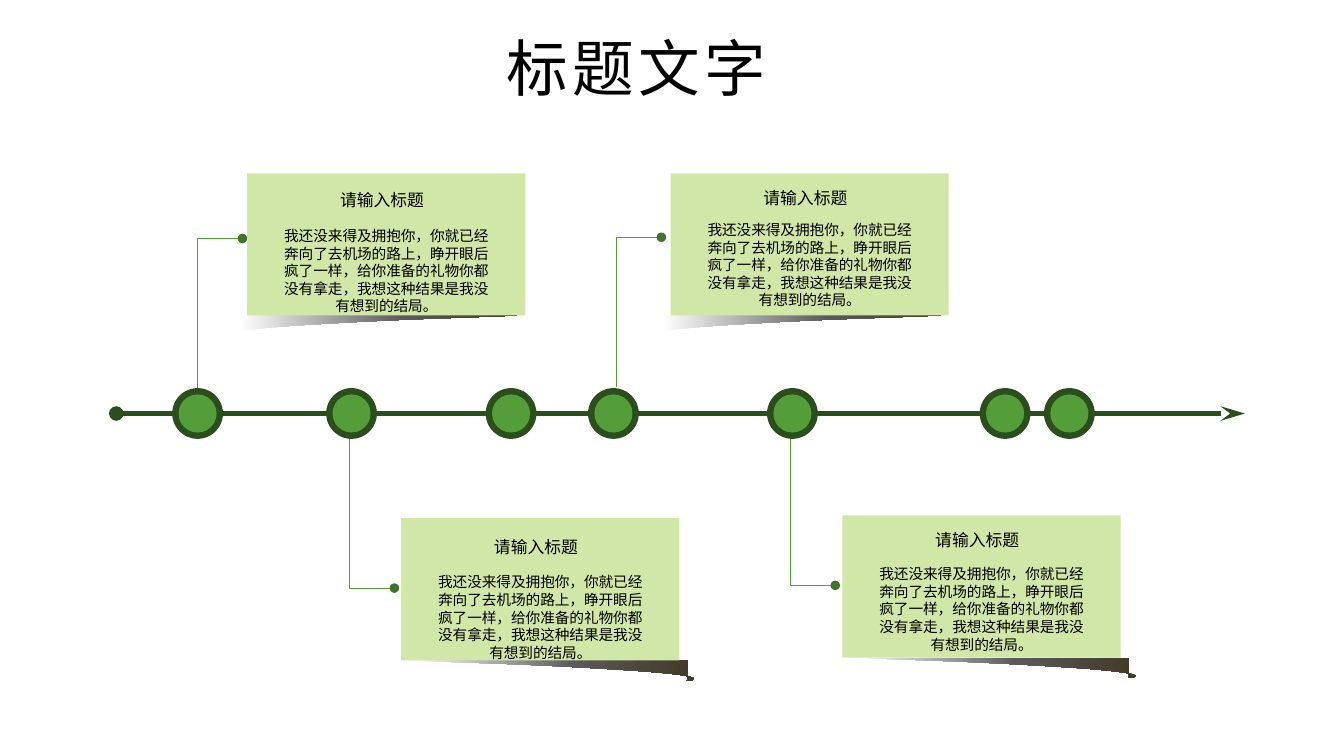
from dataclasses import dataclass

from lxml.etree import SubElement
from pptx import Presentation
from pptx.dml.color import RGBColor
from pptx.enum.shapes import MSO_CONNECTOR, MSO_SHAPE
from pptx.enum.text import MSO_ANCHOR, MSO_AUTO_SIZE, PP_ALIGN
from pptx.oxml.ns import qn
from pptx.shapes.connector import Connector
from pptx.shapes.shapetree import GroupShapes
from pptx.text.text import TextFrame
from pptx.util import Cm, Pt

DARK_GREEN, GREEN, DOT_GREEN = "2A4F1C", "549E39", "3F762A"
CARD_GREEN, BLACK = "D1E7A7", "000000"
CURL_STOPS = [(0, "FFFFFF"), (59, "5B595B"), (100, "433C29")]

HEADING = "请输入标题"
BODY = ("我还没来得及拥抱你，你就已经奔向了去机场的路上，睁开眼后疯了一样，"
        "给你准备的礼物你都没有拿走，我想这种结果是我没有想到的结局。")

# Lengths in centimetres
CARD_WIDTH, CARD_HEIGHT = 7.01, 3.58
STEM_LENGTH, BRANCH_LENGTH, DOT_SIZE = 3.78, 1.13, 0.24
AXIS_Y, AXIS_START, AXIS_END = 10.42, 2.93, 31.37
NODE_SIZE, NODE_CORE_SIZE = 1.28, 0.96
NODE_CENTRES = [4.98, 8.86, 12.88, 15.46, 19.97, 25.33, 26.95]

Point = tuple[float, float]
# Paper curl measured from the lower card corner: corners, and the controls of its two curves
CURL_CORNERS: list[Point] = [(-0.21, 0.51), (1.30, 0.25), (6.81, 0), (-0.21, 0)]
CURL_CONTROLS: list[list[Point]] = [
    [(0.05, 0.56), (-1.42, 0.43)],
    [(4.01, 0.08), (4.98, 0.08)],
]


@dataclass
class Card:
    left: float
    top: float
    heading_offset: float
    body_offset: float
    stem_x: float
    branch_y: float
    above: bool


CARDS = [
    Card(6.23, 4.37, 0.28, 1.22, 4.98, 6.01, True),
    Card(10.11, 13.06, 0.33, 1.26, 8.81, 14.82, False),
    Card(16.9, 4.37, 0.23, 1.07, 15.54, 5.98, True),
    Card(21.23, 12.99, 0.23, 1.12, 19.92, 14.75, False),
]


def colour(value: str) -> RGBColor:
    return RGBColor.from_string(value)


def add_filled(shapes: GroupShapes, kind: MSO_SHAPE, left: float, top: float,
               width: float, height: float, fill: str) -> None:
    shape = shapes.add_shape(kind, Cm(left), Cm(top), Cm(width), Cm(height))
    shape.shadow.inherit = False
    shape.fill.solid()
    shape.fill.fore_color.rgb = colour(fill)
    shape.line.fill.background()


def add_circle(shapes: GroupShapes, x: float, y: float, size: float, fill: str) -> None:
    add_filled(shapes, MSO_SHAPE.OVAL, x - size / 2, y - size / 2, size, size, fill)


def write_text(frame: TextFrame, text: str, size: float, font_name: str,
               alignment: PP_ALIGN, wrap: bool = True) -> None:
    frame.word_wrap = wrap
    frame.auto_size = MSO_AUTO_SIZE.NONE
    frame.vertical_anchor = MSO_ANCHOR.TOP
    paragraph = frame.paragraphs[0]
    paragraph.text = text
    paragraph.alignment = alignment
    paragraph.font.size = Pt(size)
    paragraph.font.name = font_name
    paragraph.font.color.rgb = colour(BLACK)


def style_connector(connector: Connector, line_colour: str, width: float) -> None:
    connector.line.color.rgb = colour(line_colour)
    connector.line.width = Pt(width)
    SubElement(connector.element.spPr, qn("a:effectLst"))


def add_curl(shapes: GroupShapes, card: Card) -> None:
    corner_x = card.left if card.above else card.left + CARD_WIDTH
    direction = 1 if card.above else -1
    bottom = card.top + CARD_HEIGHT

    def place(point: Point) -> tuple[int, int]:
        return Cm(corner_x + direction * point[0]), Cm(bottom + point[1])

    corners = [place(point) for point in CURL_CORNERS]
    builder = shapes.build_freeform(*corners[0])
    builder.add_line_segments(corners[1:], close=True)
    curl = builder.convert_to_shape()

    # Bend the first two sides
    sides = list(curl.element.spPr.iter(qn("a:lnTo")))
    for side, controls in zip(sides, CURL_CONTROLS):
        curve = side.makeelement(qn("a:cubicBezTo"))
        for x, y in map(place, controls):
            SubElement(curve, qn("a:pt"), x=str(x - curl.left), y=str(y - curl.top))
        side.addprevious(curve)
        curve.append(side[0])
        side.getparent().remove(side)

    curl.shadow.inherit = False
    curl.line.fill.background()
    curl.fill.gradient()
    curl.fill.gradient_angle = 0
    stop_list = curl.element.spPr.find(".//" + qn("a:gsLst"))
    for stop in list(stop_list):
        stop_list.remove(stop)
    for position, value in CURL_STOPS:
        stop = SubElement(stop_list, qn("a:gs"), pos=str(position * 1000))
        SubElement(stop, qn("a:srgbClr"), val=value)


def add_card(shapes: GroupShapes, card: Card) -> None:
    # Branch from the timeline to the card
    dot_x = card.stem_x + BRANCH_LENGTH
    stem_end = card.branch_y + (STEM_LENGTH if card.above else -STEM_LENGTH)
    branch = shapes.add_connector(MSO_CONNECTOR.ELBOW, Cm(dot_x), Cm(card.branch_y),
                                  Cm(card.stem_x), Cm(stem_end))
    branch.element.spPr.find(qn("a:prstGeom")).set("prst", "bentConnector2")
    style_connector(branch, GREEN, 0.5)
    add_circle(shapes, dot_x, card.branch_y, DOT_SIZE, DOT_GREEN)

    # Paper with its curl
    add_curl(shapes, card)
    add_filled(shapes, MSO_SHAPE.RECTANGLE, card.left, card.top,
               CARD_WIDTH, CARD_HEIGHT, CARD_GREEN)

    # Heading and body
    heading = shapes.add_textbox(Cm(card.left + 2.09), Cm(card.top + card.heading_offset),
                                 Cm(2.64), Cm(0.76))
    write_text(heading.text_frame, HEADING, 12, "Arial", PP_ALIGN.LEFT, wrap=False)
    body = shapes.add_textbox(Cm(card.left + 0.65), Cm(card.top + card.body_offset),
                              Cm(5.72), Cm(2.49))
    write_text(body.text_frame, BODY, 10.5, "Arial", PP_ALIGN.CENTER)


def add_timeline(shapes: GroupShapes) -> None:
    axis = shapes.add_connector(MSO_CONNECTOR.STRAIGHT, Cm(AXIS_START), Cm(AXIS_Y),
                                Cm(AXIS_END), Cm(AXIS_Y))
    style_connector(axis, DARK_GREEN, 3.5)
    line = axis.element.spPr.find(qn("a:ln"))
    SubElement(line, qn("a:headEnd"), type="oval")
    SubElement(line, qn("a:tailEnd"), type="stealth", len="lg")
    for centre in NODE_CENTRES:
        add_circle(shapes, centre, AXIS_Y, NODE_SIZE, DARK_GREEN)
        add_circle(shapes, centre, AXIS_Y, NODE_CORE_SIZE, GREEN)


def main() -> None:
    presentation = Presentation()
    presentation.slide_width, presentation.slide_height = Cm(33.87), Cm(19.05)
    slide = presentation.slides.add_slide(presentation.slide_layouts[5])

    # Title
    title = slide.shapes.title
    title.left, title.top, title.width, title.height = Cm(12.52), Cm(0.62), Cm(8.1), Cm(2.13)
    write_text(title.text_frame, "标题文字", 44, "Noto Sans CJK JP", PP_ALIGN.LEFT)
    title.element.find(".//" + qn("a:defRPr")).set("spc", "300")

    # Cards and timeline
    for card in CARDS:
        add_card(slide.shapes.add_group_shape().shapes, card)
    add_timeline(slide.shapes.add_group_shape().shapes)

    presentation.save("out.pptx")


if __name__ == "__main__":
    main()
